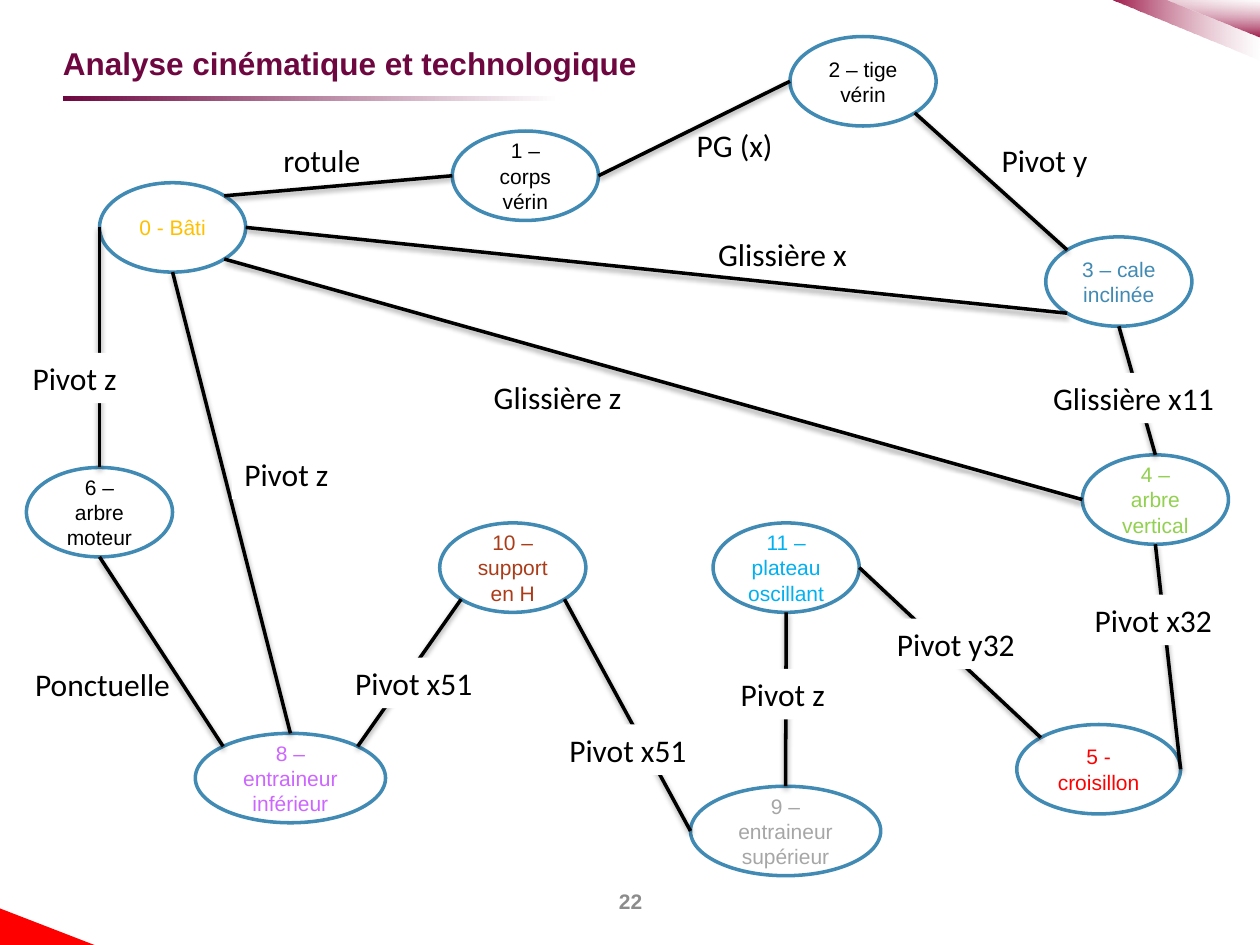
import math

import pptx
import pptx.dml.color
import pptx.enum.dml
import pptx.enum.shapes
import pptx.enum.text
import pptx.oxml
import pptx.oxml.ns
import pptx.util
from lxml import etree
from pptx.util import Inches

COLORS = {
    "plum": "6E0740", "berry": "9D1747", "white": "FFFFFF", "black": "000000",
    "red": "FF0000", "gray": "8C8C8C", "blue": "418AB3", "gold": "FFC000",
    "green": "92D050", "sky": "00B0F0", "rust": "AB3C19", "violet": "CC66FF",
    "silver": "A6A6A6",
}
RGB = {name: pptx.dml.color.RGBColor.from_string(code) for name, code in COLORS.items()}
ALIGN = pptx.enum.text.PP_ALIGN
ANCHOR = pptx.enum.text.MSO_ANCHOR
PRESET = pptx.enum.shapes.MSO_SHAPE
qn = pptx.oxml.ns.qn


def write(shape, text, size, font, color, align=ALIGN.LEFT, anchor=ANCHOR.TOP, bold=False):
    frame = shape.text_frame
    frame.word_wrap = True
    frame.vertical_anchor = anchor
    paragraph = frame.paragraphs[0]
    paragraph.alignment = align
    run = paragraph.add_run()
    run.text = text
    run.font.size = pptx.util.Pt(size)
    run.font.name = font
    run.font.bold = bold
    run.font.color.rgb = RGB[color]


def fade(shape, color, angle, opacity=100):
    """Gradient from a colour to white; the angle runs counter-clockwise."""
    shape.fill.gradient()
    shape.fill.gradient_angle = angle
    first, last = shape.fill.gradient_stops
    first.position, last.position = 0, 1
    first.color.rgb, last.color.rgb = RGB[color], RGB["white"]
    if opacity < 100:
        white = shape._element.spPr.findall(".//" + qn("a:srgbClr"))[-1]
        etree.SubElement(white, qn("a:alpha"), val=str(opacity * 1000))


prs = pptx.Presentation()
prs.slide_width, prs.slide_height = Inches(10), Inches(7.5)
slide = prs.slides.add_slide(prs.slide_layouts[6])
shapes = slide.shapes

# Corner triangles: points, colour, gradient angle, opacity of the white end
corners = [
    ([(8.81, 0), (10, 0), (10, 0.48)], "berry", 0, 47),
    ([(0, 7.21), (0.75, 7.5), (0, 7.5)], "red", None, 100),
    ([(9.25, 0), (10, 0), (10, 0.3)], "berry", 90, 57),
]
for points, color, angle, opacity in corners:
    start, *rest = [(Inches(x), Inches(y)) for x, y in points]
    builder = shapes.build_freeform(*start)
    builder.add_line_segments(rest, close=True)
    corner = builder.convert_to_shape()
    corner.shadow.inherit = False
    corner.line.fill.background()
    if angle is None:
        corner.fill.solid()
        corner.fill.fore_color.rgb = RGB[color]
    else:
        fade(corner, color, angle, opacity)

# Title, its underline and the page number
underline = shapes.add_shape(PRESET.RECTANGLE, Inches(0.5), Inches(0.76), Inches(3.94), Inches(0.04))
underline.shadow.inherit = False
underline.line.fill.background()
fade(underline, "plum", 0)

title = shapes.add_textbox(Inches(0.5), Inches(0.3), Inches(9), Inches(0.55))
title.text_frame.margin_left = title.text_frame.margin_right = 0
write(title, "Analyse cinématique et technologique", 18, "Arial", "plum", bold=True)

page_number = shapes.add_textbox(Inches(3.42), Inches(6.95), Inches(3.17), Inches(0.4))
write(page_number, "22", 12, "Arial", "gray", ALIGN.CENTER, ANCHOR.MIDDLE, True)

# Parts of the mechanism: number -> left, top, width, text, colour
PART_HEIGHT = 0.71
parts = {
    0: (0.79, 1.45, 1.16, "0 - Bâti", "gold"),
    1: (3.59, 1.04, 1.16, "1 – corps vérin", "black"),
    2: (6.27, 0.29, 1.16, "2 – tige vérin", "black"),
    3: (8.3, 1.88, 1.16, "3 – cale inclinée", "blue"),
    4: (8.59, 3.61, 1.16, "4 – arbre vertical", "green"),
    5: (8.07, 5.75, 1.3, "5 - croisillon", "red"),
    11: (5.66, 4.15, 1.16, "11 – plateau oscillant", "sky"),
    10: (3.49, 4.15, 1.16, "10 – support en H", "rust"),
    8: (1.55, 5.82, 1.51, "8 – entraineur inférieur", "violet"),
    6: (0.21, 3.71, 1.16, "6 – arbre moteur", "black"),
    9: (5.48, 6.24, 1.51, "9 – entraineur supérieur", "silver"),
}
ellipses = {}
for number, (left, top, width, text, color) in parts.items():
    ellipse = shapes.add_shape(PRESET.OVAL, Inches(left), Inches(top), Inches(width), Inches(PART_HEIGHT))
    ellipse.shadow.inherit = False
    ellipse.fill.background()
    ellipse.line.color.rgb = RGB["blue"]
    ellipse.line.width = pptx.util.Pt(2)
    write(ellipse, text, 12, "Arial", color, ALIGN.CENTER, ANCHOR.MIDDLE)
    ellipses[number] = ellipse

# Joints: (part, site) at each end; the eight sites of an ellipse
# run counter-clockwise from the top in steps of 45 degrees
TOP, TOP_LEFT, LEFT, BOTTOM_LEFT, BOTTOM, BOTTOM_RIGHT, RIGHT, TOP_RIGHT = range(8)
joints = [
    ((0, TOP_RIGHT), (1, LEFT)),
    ((1, RIGHT), (2, LEFT)),
    ((2, BOTTOM_RIGHT), (3, TOP_LEFT)),
    ((3, BOTTOM), (4, TOP)),
    ((5, RIGHT), (4, BOTTOM)),
    ((11, RIGHT), (5, TOP_LEFT)),
    ((6, TOP), (0, LEFT)),
    ((6, BOTTOM), (8, TOP_LEFT)),
    ((8, TOP), (0, BOTTOM)),
    ((8, TOP_RIGHT), (10, BOTTOM_LEFT)),
    ((9, LEFT), (10, BOTTOM_RIGHT)),
    ((9, TOP), (11, BOTTOM)),
    ((0, BOTTOM_RIGHT), (4, LEFT)),
    ((0, RIGHT), (3, BOTTOM_LEFT)),
]
SHADOW = (
    f'<a:effectLst {pptx.oxml.ns.nsdecls("a")}>'
    '<a:outerShdw blurRad="40000" dist="20000" dir="5400000" rotWithShape="0">'
    f'<a:srgbClr val="{COLORS["black"]}"><a:alpha val="38000"/></a:srgbClr>'
    '</a:outerShdw></a:effectLst>'
)
for joint in joints:
    ends = []
    for number, site in joint:
        left, top, width = parts[number][:3]
        turn = math.radians(45 * site)
        ends.append(Inches(left + width / 2 * (1 - math.sin(turn))))
        ends.append(Inches(top + PART_HEIGHT / 2 * (1 - math.cos(turn))))
    link = shapes.add_connector(pptx.enum.shapes.MSO_CONNECTOR.STRAIGHT, *ends)
    link.line.color.rgb = RGB["black"]
    link.line.width = pptx.util.Pt(2)
    link._element.spPr.append(pptx.oxml.parse_xml(SHADOW))
    # begin_connect knows four sites only, so the ellipse sites are set here
    glue = link._element.nvCxnSpPr.cNvCxnSpPr
    for tag, (number, site) in zip(("a:stCxn", "a:endCxn"), joint):
        etree.SubElement(glue, qn(tag), id=str(ellipses[number].shape_id), idx=str(site))

# Joint names: left, top, width, text, white backing
joint_names = [
    (2.15, 1.07, 0.95, "rotule", False),
    (5.43, 0.95, 0.95, "PG (x)", False),
    (7.85, 1.07, 0.95, "Pivot y", False),
    (5.6, 1.82, 1.39, "Glissière x", False),
    (3.82, 2.95, 1.39, "Glissière z", False),
    (0.16, 2.8, 0.92, "Pivot z", True),
    (0.18, 5.23, 1.39, "Ponctuelle", False),
    (1.84, 3.56, 0.92, "Pivot z", True),
    (5.78, 5.31, 0.92, "Pivot z", True),
    (4.42, 5.75, 1.24, "Pivot x51", True),
    (2.72, 5.22, 1.24, "Pivot x51", True),
    (7.02, 4.91, 1.24, "Pivot y32", True),
    (8.59, 4.72, 1.24, "Pivot x32", True),
    (8.26, 2.96, 1.49, "Glissière x11", True),
]
for left, top, width, text, backed in joint_names:
    label = shapes.add_textbox(Inches(left), Inches(top), Inches(width), Inches(0.4))
    write(label, text, 18, "Calibri", "black")
    if backed:
        label.fill.solid()
        label.fill.fore_color.rgb = RGB["white"]

prs.save("out.pptx")
